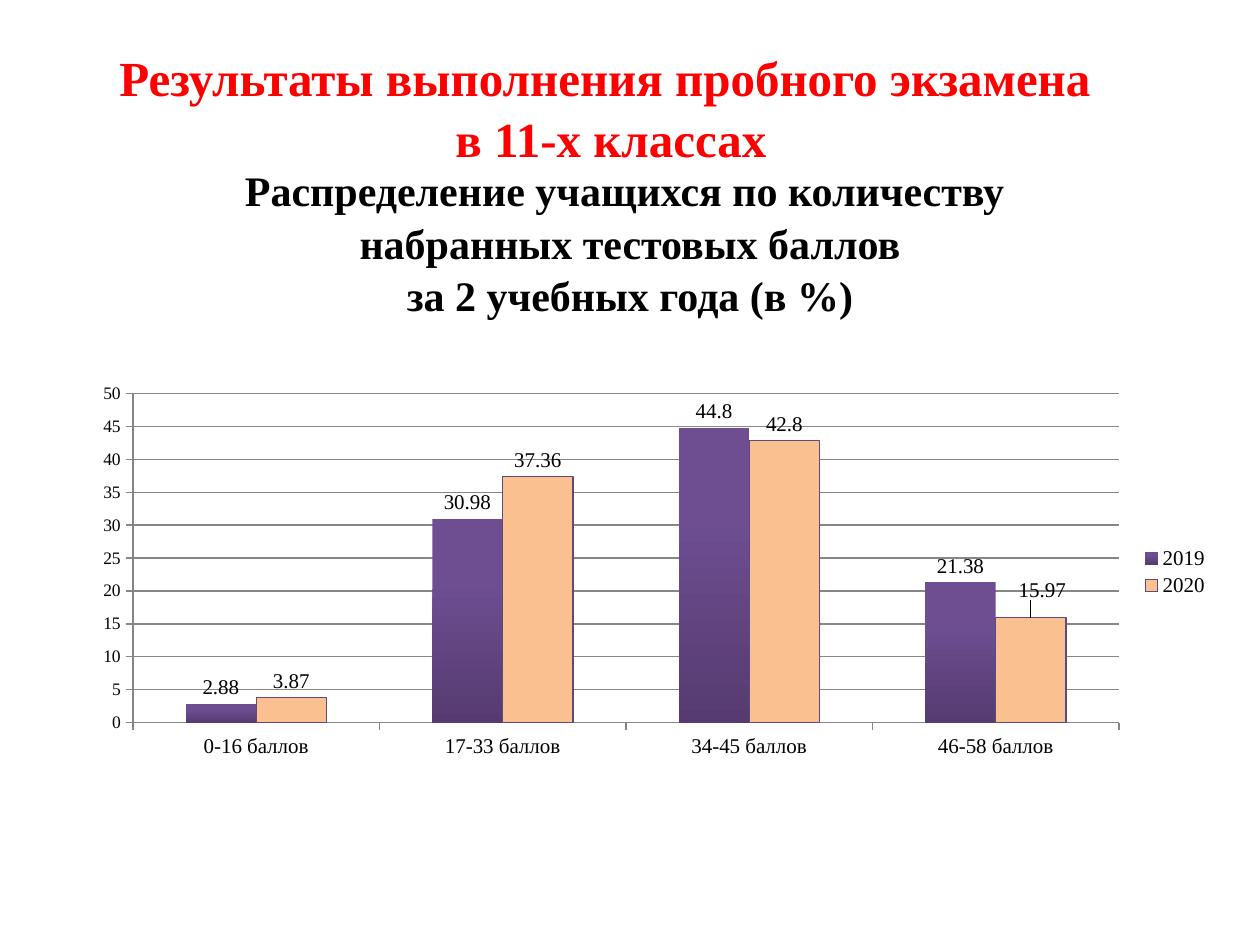
from lxml.etree import SubElement
from pptx import Presentation
from pptx.chart.data import CategoryChartData
from pptx.dml.color import RGBColor
from pptx.enum.chart import XL_CHART_TYPE as ChartType, XL_LABEL_POSITION as LabelPosition
from pptx.enum.chart import XL_LEGEND_POSITION as LegendPosition, XL_TICK_MARK as TickMark
from pptx.enum.text import MSO_ANCHOR as Anchor, PP_ALIGN as Align
from pptx.oxml.ns import qn
from pptx.util import Inches, Pt

COLORS = {
    "heading": "FF0000", "text": "000000", "grid": "868686",
    "purple_top": "6E4E91", "purple_bottom": "563B70",
    "peach": "FAC090", "outline": "604A7B",
}
FONT = "Times New Roman"


def color(name):
    return RGBColor.from_string(COLORS[name])


def set_font(font, size, color_name="text", bold=False):
    font.name, font.size, font.bold = FONT, Pt(size), bold
    font.color.rgb = color(color_name)


def write(text_frame, text, size, color_name="text", anchor=Anchor.TOP, wrap=True):
    text_frame.text = text
    text_frame.word_wrap, text_frame.vertical_anchor = wrap, anchor
    for paragraph in text_frame.paragraphs:
        paragraph.alignment, paragraph.line_spacing = Align.CENTER, 1.05
        for run in paragraph.runs:
            set_font(run.font, size, color_name, bold=True)


def set_layout(parent, index, target=None, **shares):
    for old in parent.findall(qn("c:layout")):
        parent.remove(old)
    layout = parent.makeelement(qn("c:layout"))
    manual = SubElement(layout, qn("c:manualLayout"))
    settings = {"layoutTarget": target, "xMode": "edge", "yMode": "edge"} if target else {}
    for key, value in (settings | shares).items():
        SubElement(manual, qn(f"c:{key}")).set("val", str(value))
    parent.insert(index, layout)


class ResultsSlide:
    """Holds the current slide and places its elements by shares of the slide's size."""

    def __init__(self, presentation):
        self.size = (presentation.slide_width, presentation.slide_height) * 2
        self.slide = presentation.slides.add_slide(presentation.slide_layouts[5])

    def box(self, shares):
        return [int(share * side) for share, side in zip(shares, self.size)]

    def title(self, text, shares):
        shape = self.slide.shapes.title
        shape.left, shape.top, shape.width, shape.height = self.box(shares)
        write(shape.text_frame, text, 28, "heading")

    def subtitle(self, text, shares):
        shape = self.slide.shapes.add_textbox(*self.box(shares))
        write(shape.text_frame, text, 24, anchor=Anchor.MIDDLE, wrap=False)

    def column_chart(self, categories, series, shares):
        data = CategoryChartData()
        data.categories = categories
        for name, values in series.items():
            data.add_series(name, values)
        chart = self.slide.shapes.add_chart(
            ChartType.COLUMN_CLUSTERED, *self.box(shares), data).chart
        chart.has_title = False
        set_font(chart.font, 10)
        chart.has_legend = True
        chart.legend.position = LegendPosition.RIGHT
        chart.legend.include_in_layout = False
        set_font(chart.legend.font, 12)
        self.axes(chart)
        plot = chart.plots[0]
        plot.gap_width, plot.overlap, plot.vary_by_categories = 150, 0, False
        for one_series in plot.series:
            labels = one_series.data_labels
            labels.show_value, labels.position = True, LabelPosition.OUTSIDE_END
            set_font(labels.font, 12)
        set_layout(chart.element.find(".//" + qn("c:plotArea")), 0, "inner",
                   x=0.05, y=0.04, w=0.86, h=0.85)
        return chart

    def axes(self, chart):
        value_axis = chart.value_axis
        value_axis.minimum_scale, value_axis.maximum_scale, value_axis.major_unit = 0, 50, 5
        value_axis.has_major_gridlines = True
        value_axis.major_gridlines.format.line.color.rgb = color("grid")
        for axis, size in ((chart.category_axis, 12), (value_axis, 10)):
            axis.major_tick_mark = TickMark.OUTSIDE
            set_font(axis.tick_labels.font, size)
            axis.format.line.color.rgb = color("grid")

    def gradient(self, series, names):
        fill = series.format.fill
        fill.gradient()
        fill.gradient_angle = 270
        for stop, name, position in zip(fill.gradient_stops, names, (0.3, 1)):
            stop.color.rgb, stop.position = color(name), position

    def outlined(self, series, fill_name, line_name):
        series.format.fill.solid()
        series.format.fill.fore_color.rgb = color(fill_name)
        series.format.line.color.rgb = color(line_name)
        series.format.line.width = Pt(0.75)

    def shift_label(self, chart, series, point, x, y):
        label = series.points[point].data_label
        set_font(label.font, 12)
        label.position = LabelPosition.OUTSIDE_END
        set_layout(chart.element.find(".//" + qn("c:dLbl")), 1, x=x, y=y)


def main():
    presentation = Presentation()
    presentation.slide_width, presentation.slide_height = Inches(10), Inches(7.5)
    slide = ResultsSlide(presentation)
    slide.title("Результаты выполнения пробного экзамена\v в 11-х классах",
                (0.04, 0.04, 0.88, 0.14))
    slide.subtitle("Распределение учащихся по количеству \n"
                   "набранных тестовых баллов\nза 2 учебных года (в %)",
                   (0.18, 0.17, 0.64, 0.17))
    chart = slide.column_chart(
        ["0-16 баллов", "17-33 баллов", "34-45 баллов", "46-58 баллов"],
        {"2019": (2.88, 30.98, 44.8, 21.38), "2020": (3.87, 37.36, 42.8, 15.97)},
        (0.06, 0.4, 0.91, 0.41))
    first, second = chart.plots[0].series
    slide.gradient(first, ("purple_top", "purple_bottom"))
    slide.outlined(second, "peach", "outline")
    slide.shift_label(chart, second, 3, x=0.01, y=-0.03)
    presentation.save("out.pptx")


if __name__ == "__main__":
    main()
